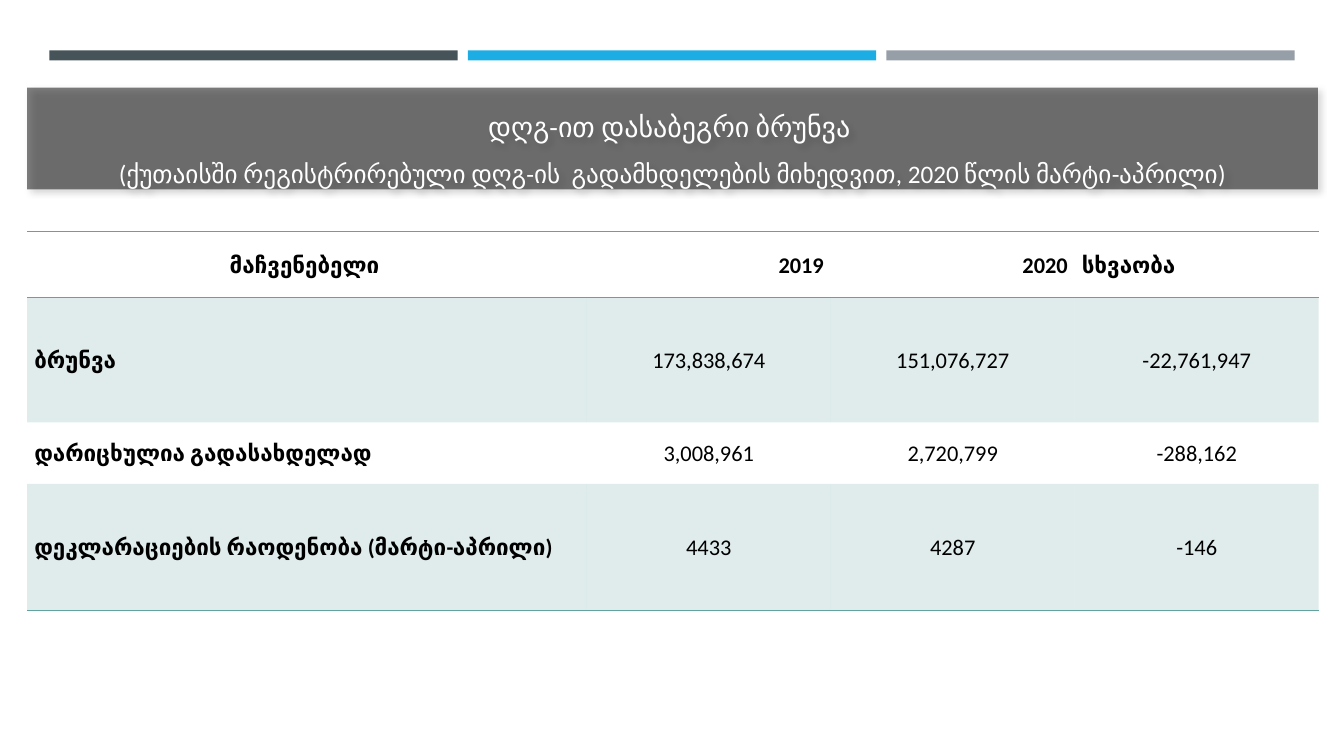
from dataclasses import dataclass

from lxml import etree
from pptx import Presentation
from pptx.dml.color import RGBColor
from pptx.enum.shapes import MSO_SHAPE
from pptx.enum.text import MSO_ANCHOR, MSO_AUTO_SIZE, PP_ALIGN
from pptx.oxml.ns import qn
from pptx.util import Inches, Pt

RECT = MSO_SHAPE.RECTANGLE
TOP, MIDDLE = MSO_ANCHOR.TOP, MSO_ANCHOR.MIDDLE
NO_AUTOFIT = MSO_AUTO_SIZE.NONE
LEFT, CENTER, RIGHT = PP_ALIGN.LEFT, PP_ALIGN.CENTER, PP_ALIGN.RIGHT
NO_TABLE_STYLE = "{2D5ABB26-0587-4C30-8999-92F81FD0307C}"


@dataclass(frozen=True)
class Theme:
    font: str = "Calibri"
    black: str = "000000"
    white: str = "FFFFFF"
    teal: str = "62A39F"
    bars: tuple[str, ...] = ("465359", "1CADE4", "969FA7")
    title_size: int = 20
    subtitle_size: int = 18
    table_size: int = 16


@dataclass(frozen=True)
class Bar:
    left: float
    color: str


@dataclass(frozen=True)
class TitleLine:
    text: str
    size: int


@dataclass(frozen=True)
class Row:
    height: float
    texts: tuple[str, ...]
    aligns: tuple[PP_ALIGN, ...] = (LEFT, CENTER, CENTER, CENTER)
    header: bool = False
    shaded: bool = False
    borders: tuple[str, ...] = ()


THEME = Theme()
BARS = [Bar(0.49 + 4.15 * i, color) for i, color in enumerate(THEME.bars)]
TITLE_LINES = [
    TitleLine("დღგ-ით დასაბეგრი ბრუნვა ", THEME.title_size),
    TitleLine(
        "(ქუთაისში რეგისტრირებული დღგ-ის  გადამხდელების მიხედვით, 2020 წლის მარტი-აპრილი)",
        THEME.subtitle_size,
    ),
]
COLUMN_WIDTHS = (5.55, 2.42, 2.42, 2.42)
ROWS = [
    Row(0.65, ("მაჩვენებელი ", "2019", "2020", "სხვაობა"),
        aligns=(CENTER, RIGHT, RIGHT, LEFT), header=True, borders=("a:lnT", "a:lnB")),
    Row(1.24, ("ბრუნვა", "173,838,674", "151,076,727", "-22,761,947"), shaded=True),
    Row(0.61, ("დარიცხულია გადასახდელად", "3,008,961", "2,720,799", "-288,162")),
    Row(1.26, ("დეკლარაციების რაოდენობა (მარტი-აპრილი)", "4433", "4287", "-146"),
        shaded=True, borders=("a:lnB",)),
]


def rgb(color: str) -> RGBColor:
    return RGBColor.from_string(color)


def add_color(parent, color: str, alpha: int = 100) -> None:
    clr = etree.SubElement(parent, qn("a:srgbClr"), val=color)
    if alpha < 100:
        etree.SubElement(clr, qn("a:alpha"), val=str(alpha * 1000))


def fill_solid(fill, props, color: str, alpha: int) -> None:
    fill.solid()
    fill.fore_color.rgb = rgb(color)
    clr = props.find(qn("a:solidFill")).find(qn("a:srgbClr"))
    etree.SubElement(clr, qn("a:alpha"), val=str(alpha * 1000))


def add_run(p, text: str, size: int, color: str, bold: bool = False) -> None:
    r = p.add_run()
    r.text = text
    r.font.name = THEME.font
    r.font.size = Pt(size)
    r.font.bold = bold
    r.font.color.rgb = rgb(color)


def draw_bar(s, bar: Bar) -> None:
    sp = s.shapes.add_shape(RECT, Inches(bar.left), Inches(0.5), Inches(4.05), Inches(0.1))
    sp.shadow.inherit = False
    sp.fill.solid()
    sp.fill.fore_color.rgb = rgb(bar.color)
    sp.line.fill.background()


def draw_title(s, lines: list[TitleLine]) -> None:
    sp = s.shapes.title
    sp.left, sp.top, sp.width, sp.height = map(Inches, (0.27, 0.87, 12.8, 1.01))
    sp_pr = sp.element.spPr
    fill_solid(sp.fill, sp_pr, THEME.black, 50)
    effects = etree.SubElement(sp_pr, qn("a:effectLst"))
    shadow = etree.SubElement(
        effects, qn("a:outerShdw"), blurRad=str(Pt(4.5)), dist=str(Pt(2.6)),
        dir=str(53 * 60000), rotWithShape="0")
    add_color(shadow, THEME.black, 30)
    tf = sp.text_frame
    tf.word_wrap = True
    tf.auto_size = NO_AUTOFIT
    tf.vertical_anchor = TOP
    for i, line in enumerate(lines):
        p = tf.add_paragraph() if i else tf.paragraphs[0]
        p.alignment = CENTER
        p.line_spacing = 1.5
        add_run(p, line.text, line.size, THEME.white)


def draw_cell(cell, row: Row, column: int) -> None:
    cell.margin_left = cell.margin_right = Inches(0.07)
    cell.margin_top = cell.margin_bottom = 0
    cell.vertical_anchor = MIDDLE
    p = cell.text_frame.paragraphs[0]
    p.alignment = row.aligns[column]
    p.line_spacing = 1.06
    add_run(p, row.texts[column], THEME.table_size, THEME.black, row.header or column == 0)
    tc_pr = cell._tc.get_or_add_tcPr()
    for side in row.borders:
        ln = etree.SubElement(tc_pr, qn(side), w=str(Pt(1)))
        add_color(etree.SubElement(ln, qn("a:solidFill")), THEME.teal)
    if row.shaded:
        fill_solid(cell.fill, tc_pr, THEME.teal, 20)
    else:
        cell.fill.background()


def draw_table(s, rows: list[Row]) -> None:
    height = sum(row.height for row in rows)
    frame = s.shapes.add_table(
        len(rows), len(COLUMN_WIDTHS), Inches(0.27), Inches(2.3), Inches(12.8), Inches(height))
    table = frame.table
    table.horz_banding = False
    table._tbl.tblPr.find(qn("a:tableStyleId")).text = NO_TABLE_STYLE
    for column, width in zip(table.columns, COLUMN_WIDTHS):
        column.width = Inches(width)
    for i, row in enumerate(rows):
        table.rows[i].height = Inches(row.height)
        for j in range(len(row.texts)):
            draw_cell(table.cell(i, j), row, j)


def main() -> None:
    prs = Presentation()
    prs.slide_width, prs.slide_height = Inches(13.33), Inches(7.5)
    s = prs.slides.add_slide(prs.slide_layouts[5])
    for bar in BARS:
        draw_bar(s, bar)
    draw_title(s, TITLE_LINES)
    draw_table(s, ROWS)
    prs.save("out.pptx")


if __name__ == "__main__":
    main()
